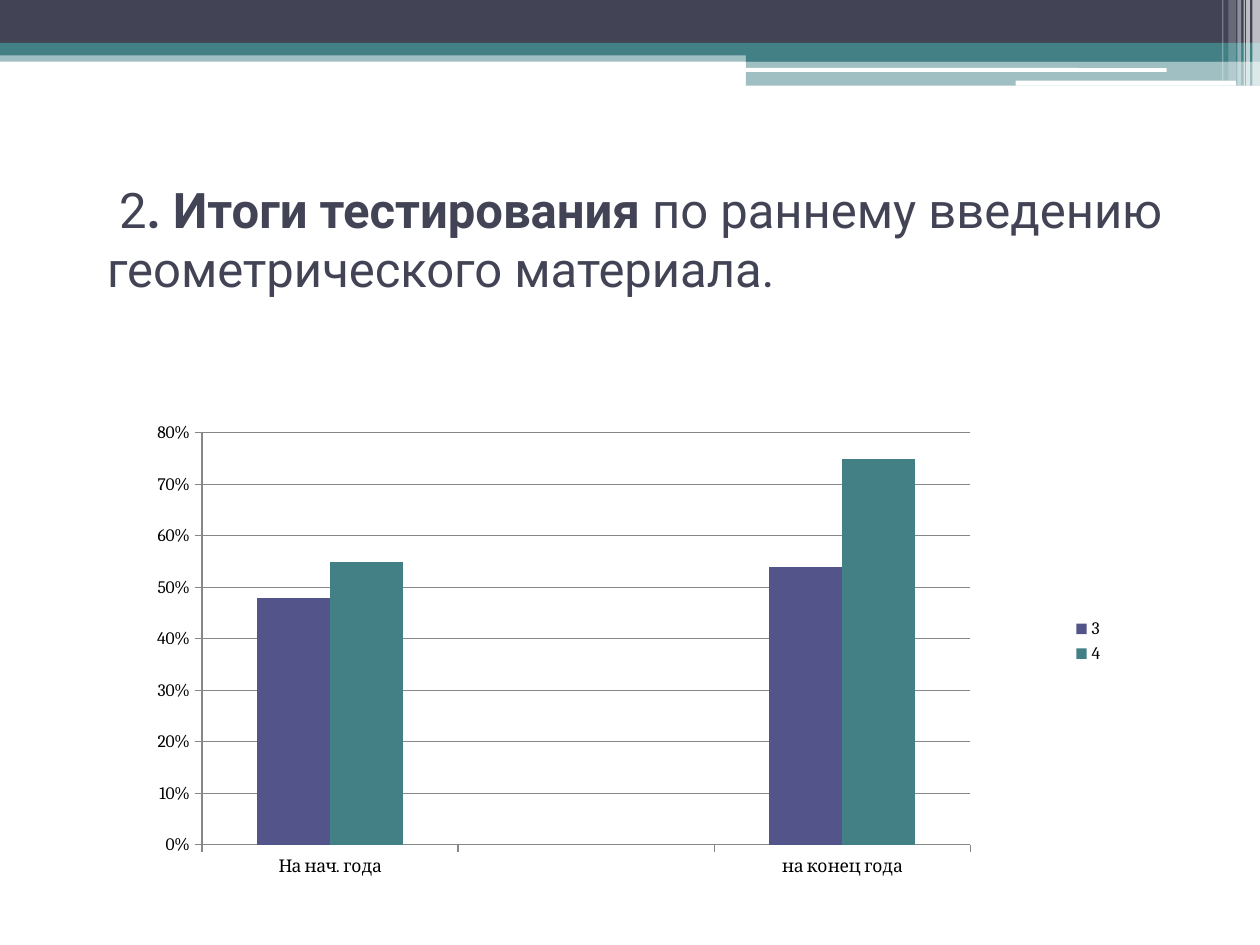
from dataclasses import dataclass

from lxml import etree
from pptx import Presentation
from pptx.chart.data import CategoryChartData
from pptx.dml.color import RGBColor
from pptx.enum.chart import XL_CHART_TYPE, XL_LEGEND_POSITION, XL_TICK_MARK
from pptx.enum.shapes import MSO_SHAPE
from pptx.enum.text import MSO_ANCHOR, PP_ALIGN
from pptx.oxml.ns import qn
from pptx.util import Inches, Pt

RECTANGLE = MSO_SHAPE.RECTANGLE
ROUNDED = MSO_SHAPE.ROUNDED_RECTANGLE
COLUMNS = XL_CHART_TYPE.COLUMN_CLUSTERED
LEGEND_RIGHT = XL_LEGEND_POSITION.RIGHT
TICK_OUTSIDE = XL_TICK_MARK.OUTSIDE
TICK_NONE = XL_TICK_MARK.NONE
MIDDLE = MSO_ANCHOR.MIDDLE
LEFT = PP_ALIGN.LEFT


@dataclass(frozen=True)
class Theme:
    dark: RGBColor = RGBColor.from_string("424456")
    teal: RGBColor = RGBColor.from_string("438086")
    violet: RGBColor = RGBColor.from_string("53548A")
    white: RGBColor = RGBColor.from_string("FFFFFF")
    black: RGBColor = RGBColor.from_string("000000")
    grid: RGBColor = RGBColor.from_string("878787")
    title_font: str = "Roboto"
    chart_font: str = "Cambria"
    title_size: Pt = Pt(28)
    chart_size: Pt = Pt(10)


THEME = Theme()


def add_band(page, box, color, opacity=100, kind=RECTANGLE):
    band = page.shapes.add_shape(kind, *(Inches(length) for length in box))
    band.shadow.inherit = False
    band.fill.solid()
    band.fill.fore_color.rgb = color
    band.line.fill.background()
    if opacity < 100:
        color_node = band.fill._xPr.find(qn("a:solidFill"))[0]
        etree.SubElement(color_node, qn("a:alpha"), val=str(opacity * 1000))


def add_header(page, box):
    left, top, width, height = box
    right = left + width
    accent_left, accent_width = right - 4.08, 4.08
    bands = [
        (left, 0.4, width, 0.09, THEME.teal, 50),
        (left, 0, width, 0.34, THEME.dark, 100),
        (left, 0.34, width, 0.1, THEME.teal, 100),
        (accent_left, 0.39, accent_width, 0.1, THEME.teal, 100),
        (accent_left, 0.48, accent_width, 0.2, THEME.teal, 50),
    ]
    for x, y, band_width, band_height, color, opacity in bands:
        add_band(page, (x, top + y, band_width, band_height), color, opacity)

    for offset, y, band_width, band_height in [(4.09, 0.54, 3.35, 0.03), (1.94, 0.64, 1.75, 0.04)]:
        add_band(page, (right - offset, top + y, band_width, band_height), THEME.white, kind=ROUNDED)

    stripes = [
        (0.06, 0.06, height, 65),
        (0.11, 0.03, height, 65),
        (0.13, 0.01, height, 60),
        (0.18, 0.03, height, 40),
        (0.25, 0.06, height - 0.04, 20),
        (0.3, 0.01, height - 0.04, 30),
    ]
    for offset, stripe_width, stripe_height, opacity in stripes:
        add_band(page, (right - offset, top, stripe_width, stripe_height), THEME.white, opacity)


def add_title(page, box):
    title = page.shapes.title
    title.left, title.top, title.width, title.height = (Inches(length) for length in box)
    frame = title.text_frame
    frame.word_wrap = True
    frame.vertical_anchor = MIDDLE
    para = frame.paragraphs[0]
    para.alignment = LEFT
    for text, bold in [
        (" 2", False),
        (". Итоги тестирования ", True),
        ("по раннему введению геометрического материала.", False),
    ]:
        span = para.add_run()
        span.text = text
        span.font.name = THEME.title_font
        span.font.size = THEME.title_size
        span.font.color.rgb = THEME.dark
        span.font.bold = bold


def set_plot_layout(chart, x, y, width, height):
    plot_area = chart._chartSpace.chart.plotArea
    layout = plot_area.find(qn("c:layout"))
    if layout is None:
        layout = etree.Element(qn("c:layout"))
        plot_area.insert(0, layout)
    manual = etree.SubElement(layout, qn("c:manualLayout"))
    for tag, value in [
        ("layoutTarget", "inner"),
        ("xMode", "edge"),
        ("yMode", "edge"),
        ("x", x),
        ("y", y),
        ("w", width),
        ("h", height),
    ]:
        etree.SubElement(manual, qn(f"c:{tag}"), val=str(value))


def add_results_chart(page, box):
    results = CategoryChartData(number_format="0%")
    results.categories = ["На нач. года", "", "на конец года"]
    results.add_series("3", [0.48, None, 0.54])
    results.add_series("4", [0.55, None, 0.75])
    lengths = (Inches(length) for length in box)
    chart = page.shapes.add_chart(COLUMNS, *lengths, results).chart
    chart.has_title = False
    chart.font.name = THEME.chart_font
    chart.font.size = THEME.chart_size
    chart.font.color.rgb = THEME.black

    chart.has_legend = True
    chart.legend.position = LEGEND_RIGHT
    chart.legend.include_in_layout = False

    plot = chart.plots[0]
    plot.gap_width = 150
    plot.overlap = 0
    plot.vary_by_categories = False
    for series, color in zip(plot.series, [THEME.violet, THEME.teal]):
        series.format.fill.solid()
        series.format.fill.fore_color.rgb = color

    values = chart.value_axis
    values.minimum_scale, values.maximum_scale, values.major_unit = 0, 0.8, 0.1
    values.has_major_gridlines = True
    values.tick_labels.number_format = "0%"
    values.tick_labels.number_format_is_linked = False
    for axis in (chart.category_axis, values):
        axis.major_tick_mark = TICK_OUTSIDE
        axis.minor_tick_mark = TICK_NONE
    for styled in (chart.category_axis, values, values.major_gridlines):
        styled.format.line.color.rgb = THEME.grid
        styled.format.line.width = Pt(0.75)
    set_plot_layout(chart, 0.06, 0.08, 0.79, 0.83)


def main():
    deck = Presentation()
    deck.slide_width, deck.slide_height = Inches(10), Inches(7.5)
    page = deck.slides.add_slide(deck.slide_layouts[5])
    add_header(page, (0, 0, 10, 0.68))
    add_title(page, (0.75, 1.31, 9, 1.17))
    add_results_chart(page, (1.14, 3.12, 7.72, 3.94))
    deck.save("out.pptx")


if __name__ == "__main__":
    main()
